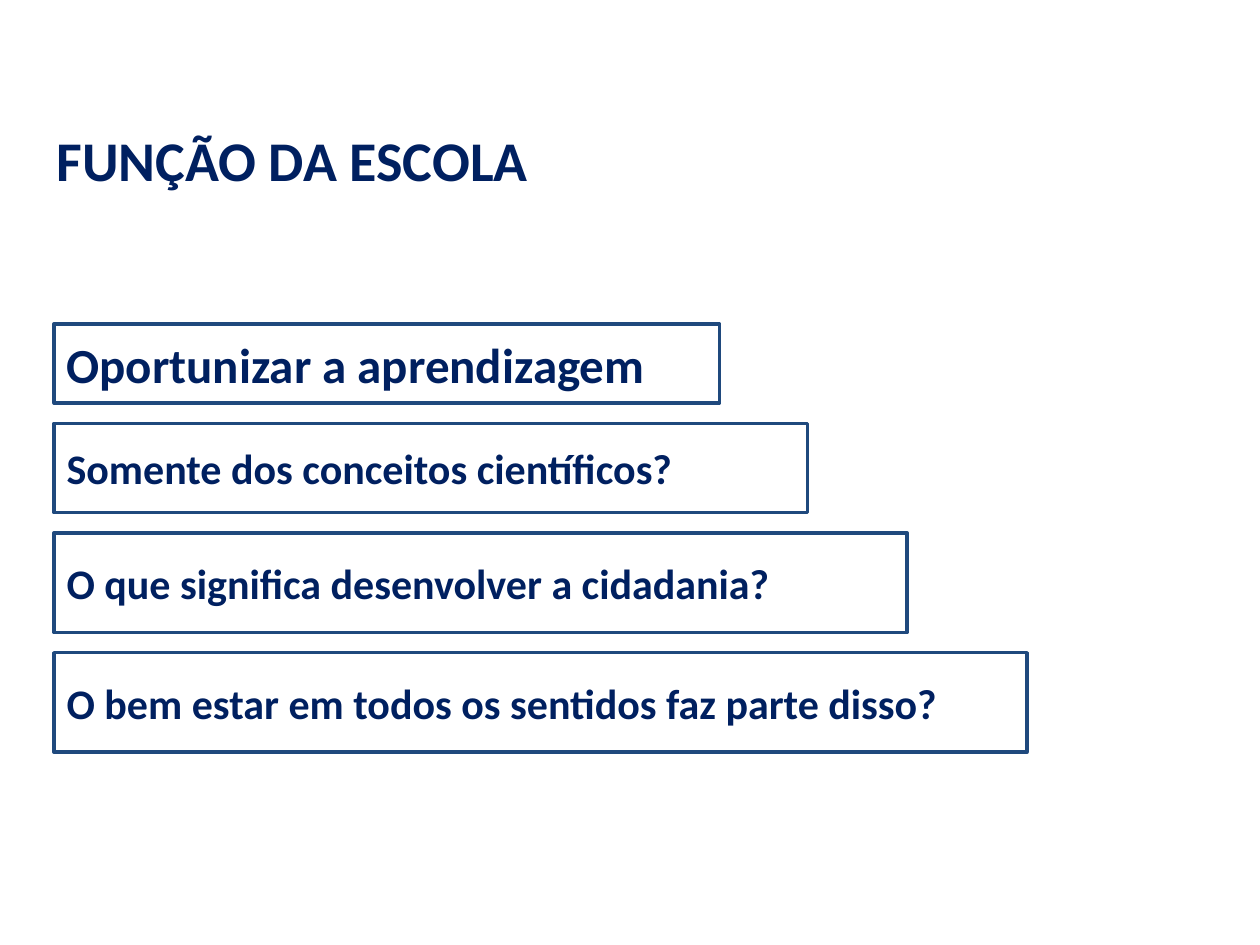
from dataclasses import dataclass

import pptx
import pptx.dml.color
import pptx.enum.shapes
import pptx.enum.text
import pptx.util
from pptx.util import Inches


@dataclass(frozen=True)
class Theme:
    font: str = "Calibri"
    text: str = "002060"
    outline: str = "1F497D"
    outline_width: int = 2
    title_size: int = 32
    lead_size: int = 28
    question_size: int = 24


THEME = Theme()

STATEMENTS = [
    ("Oportunizar a aprendizagem", 5.28, 0.63, THEME.lead_size),
    ("Somente dos conceitos científicos?", 5.98, 0.71, THEME.question_size),
    ("O que significa desenvolver a cidadania?", 6.77, 0.79, THEME.question_size),
    ("O bem estar em todos os sentidos faz parte disso?", 7.72, 0.79, THEME.question_size),
]


def color(value):
    return pptx.dml.color.RGBColor.from_string(value)


def write(box, text, size, anchor):
    frame = box.text_frame
    frame.word_wrap = True
    frame.vertical_anchor = anchor
    para = frame.paragraphs[0]
    para.text = text
    para.alignment = pptx.enum.text.PP_ALIGN.LEFT
    para.font.name = THEME.font
    para.font.size = pptx.util.Pt(size)
    para.font.bold = True
    para.font.color.rgb = color(THEME.text)


def add_title(page, left, top, width, height):
    box = page.shapes.add_textbox(left, top, width, height)
    write(box, "FUNÇÃO DA ESCOLA", THEME.title_size, pptx.enum.text.MSO_ANCHOR.TOP)


def add_statements(page, left, top, gap):
    for text, width, height, size in STATEMENTS:
        box = page.shapes.add_shape(
            pptx.enum.shapes.MSO_SHAPE.RECTANGLE, left, top, Inches(width), Inches(height)
        )
        box.shadow.inherit = False
        box.fill.background()
        box.line.color.rgb = color(THEME.outline)
        box.line.width = pptx.util.Pt(THEME.outline_width)
        write(box, text, size, pptx.enum.text.MSO_ANCHOR.MIDDLE)
        top += Inches(height) + gap


def main():
    deck = pptx.Presentation()
    deck.slide_width = Inches(10)
    deck.slide_height = Inches(7.5)
    page = deck.slides.add_slide(deck.slide_layouts[6])
    add_title(page, Inches(0.35), Inches(0.95), Inches(8.86), Inches(1.18))
    add_statements(page, Inches(0.43), Inches(2.57), Inches(0.16))
    deck.save("out.pptx")


if __name__ == "__main__":
    main()
